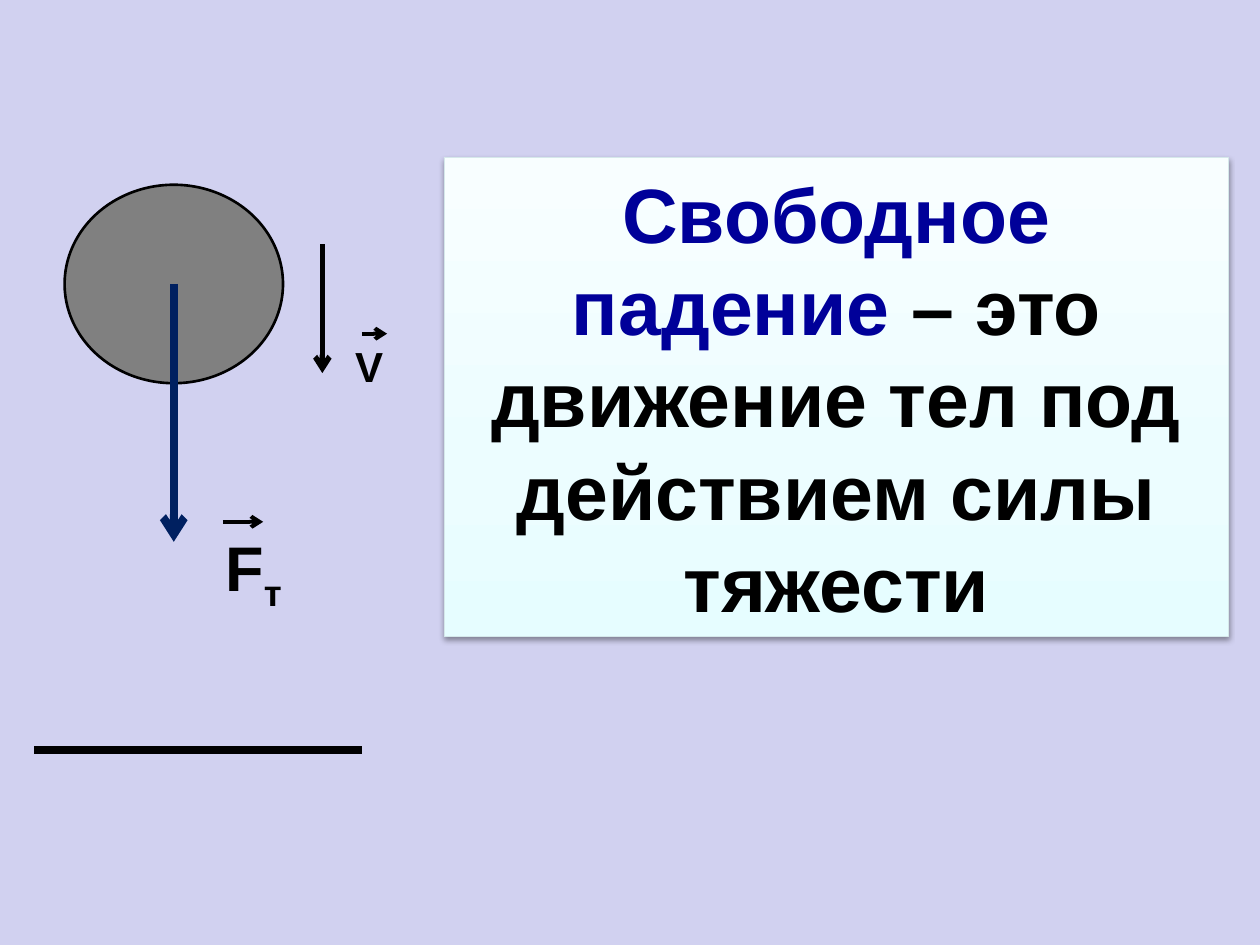
from copy import deepcopy
from dataclasses import dataclass

from lxml import etree
from pptx import Presentation
from pptx.dml.color import RGBColor
from pptx.enum.shapes import MSO_CONNECTOR, MSO_SHAPE
from pptx.enum.text import MSO_ANCHOR, PP_ALIGN
from pptx.oxml import parse_xml
from pptx.oxml.ns import nsdecls, qn
from pptx.util import Pt

STRAIGHT = MSO_CONNECTOR.STRAIGHT
OVAL, RECTANGLE = MSO_SHAPE.OVAL, MSO_SHAPE.RECTANGLE
MIDDLE, CENTER = MSO_ANCHOR.MIDDLE, PP_ALIGN.CENTER

BLACK = RGBColor(0x00, 0x00, 0x00)
NAVY = RGBColor(0x00, 0x20, 0x60)
TERM_BLUE = RGBColor(0x00, 0x00, 0x99)
GRAY = RGBColor(0x80, 0x80, 0x80)
LAVENDER = RGBColor(0xD1, 0xD1, 0xF0)
PANEL_EDGE = RGBColor(0xD5, 0xE8, 0xEA)
PANEL_STOPS = [
    (0, RGBColor(0xE6, 0xFD, 0xFF)),
    (0.35, RGBColor(0xEC, 0xFD, 0xFF)),
    (1, RGBColor(0xF8, 0xFE, 0xFF)),
]


@dataclass
class Frame:
    left: float
    top: float
    width: float
    height: float

    def lengths(self):
        return [Pt(v) for v in (self.left, self.top, self.width, self.height)]


@dataclass
class Span:
    text: str
    size: float
    color: RGBColor = BLACK
    baseline: int = 0


@dataclass
class Line:
    start: tuple[float, float]
    end: tuple[float, float]
    weight: float
    color: RGBColor = BLACK
    arrow: bool = True


def write_spans(para, spans: list[Span]) -> None:
    for span in spans:
        run = para.add_run()
        run.text = span.text
        formats = {"name": "Arial", "size": Pt(span.size), "bold": True}
        for name, value in formats.items():
            setattr(run.font, name, value)
        run.font.color.rgb = span.color
        if span.baseline:
            run.font._element.set("baseline", str(span.baseline * 1000))


def add_label(page, frame: Frame, spans: list[Span]) -> None:
    box = page.shapes.add_textbox(*frame.lengths())
    box.text_frame.word_wrap = True
    write_spans(box.text_frame.paragraphs[0], spans)


def add_line(page, line: Line) -> None:
    points = [Pt(v) for v in (*line.start, *line.end)]
    connector = page.shapes.add_connector(STRAIGHT, *points)
    connector.line.width = Pt(line.weight)
    connector.line.color.rgb = line.color
    if line.arrow:
        outline = connector.line._get_or_add_ln()
        etree.SubElement(outline, qn("a:tailEnd"), type="arrow")
    etree.SubElement(connector._element.spPr, qn("a:effectLst"))


def add_outlined_shape(page, kind, frame: Frame, edge: RGBColor, weight: float):
    shape = page.shapes.add_shape(kind, *frame.lengths())
    shape.shadow.inherit = False
    shape.line.color.rgb = edge
    shape.line.width = Pt(weight)
    return shape


def fill_gradient(shape, stops) -> None:
    """Fill from bottom to top with any number of stops."""
    shape.fill.gradient()
    shape.fill.gradient_angle = 90
    stop_list = shape._element.spPr.find(qn("a:gradFill")).find(qn("a:gsLst"))
    for _ in range(len(stops) - len(stop_list)):
        stop_list.append(deepcopy(stop_list[-1]))
    for stop, (position, color) in zip(shape.fill.gradient_stops, stops):
        stop.position = position
        stop.color.rgb = color


def add_soft_shadow(shape) -> None:
    effects = shape._element.spPr.find(qn("a:effectLst"))
    effects.append(parse_xml(
        f'<a:outerShdw {nsdecls("a")} blurRad="{Pt(3.15)}" dist="{Pt(1.57)}" '
        'dir="5400000" rotWithShape="0">'
        '<a:srgbClr val="000000"><a:alpha val="38000"/></a:srgbClr>'
        '</a:outerShdw>'
    ))


def add_definition(page, frame: Frame, spans: list[Span]) -> None:
    panel = add_outlined_shape(page, RECTANGLE, frame, PANEL_EDGE, 0.75)
    fill_gradient(panel, PANEL_STOPS)
    add_soft_shadow(panel)
    text = panel.text_frame
    for name, value in {"word_wrap": True, "vertical_anchor": MIDDLE}.items():
        setattr(text, name, value)
    text.paragraphs[0].alignment = CENTER
    write_spans(text.paragraphs[0], spans)


def main() -> None:
    deck = Presentation()
    deck.slide_width, deck.slide_height = Pt(720), Pt(540)
    page = deck.slides.add_slide(deck.slide_layouts[6])
    page.background.fill.solid()
    page.background.fill.fore_color.rgb = LAVENDER

    add_label(page, Frame(195.8, 191, 39.6, 36.5), [Span("V", 24)])

    ball_frame = Frame(36.9, 105.6, 124.8, 113.4)
    ball = add_outlined_shape(page, OVAL, ball_frame, BLACK, 1.5)
    ball.fill.solid()
    ball.fill.fore_color.rgb = GRAY
    center_x = ball_frame.left + ball_frame.width / 2
    center_y = ball_frame.top + ball_frame.height / 2

    ground = Line((19.6, 428.5), (206.8, 428.5), 4.5, arrow=False)
    gravity = Line((center_x, center_y), (center_x, 309.6), 4.5, NAVY)
    velocity = Line((184.2, 139.5), (184.2, 213.2), 3)
    force_mark = Line((127.4, 298.2), (150.4, 298.2), 2.25)
    velocity_mark = Line((206.8, 190.7), (221.2, 190.7), 2.25)
    for line in (ground, gravity, velocity, force_mark, velocity_mark):
        add_line(page, line)

    add_label(page, Frame(121.7, 298.2, 56.9, 51),
              [Span("F", 36), Span("т", 36, baseline=-25)])
    add_definition(page, Frame(254, 90, 448, 273.8), [
        Span("Свободное падение ", 44, TERM_BLUE),
        Span("– это движение тел под действием силы тяжести", 44),
    ])

    deck.save("out.pptx")


if __name__ == "__main__":
    main()
